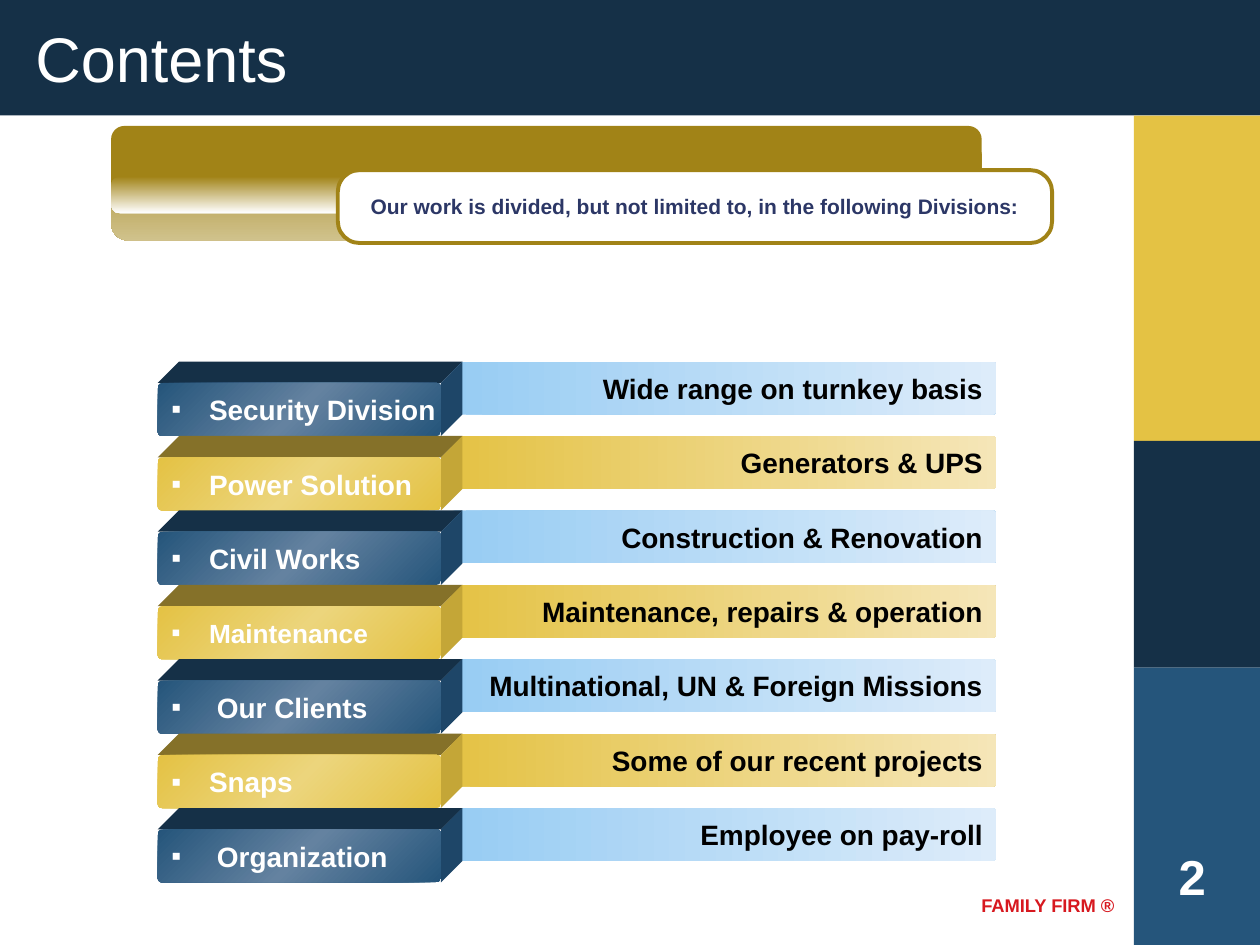
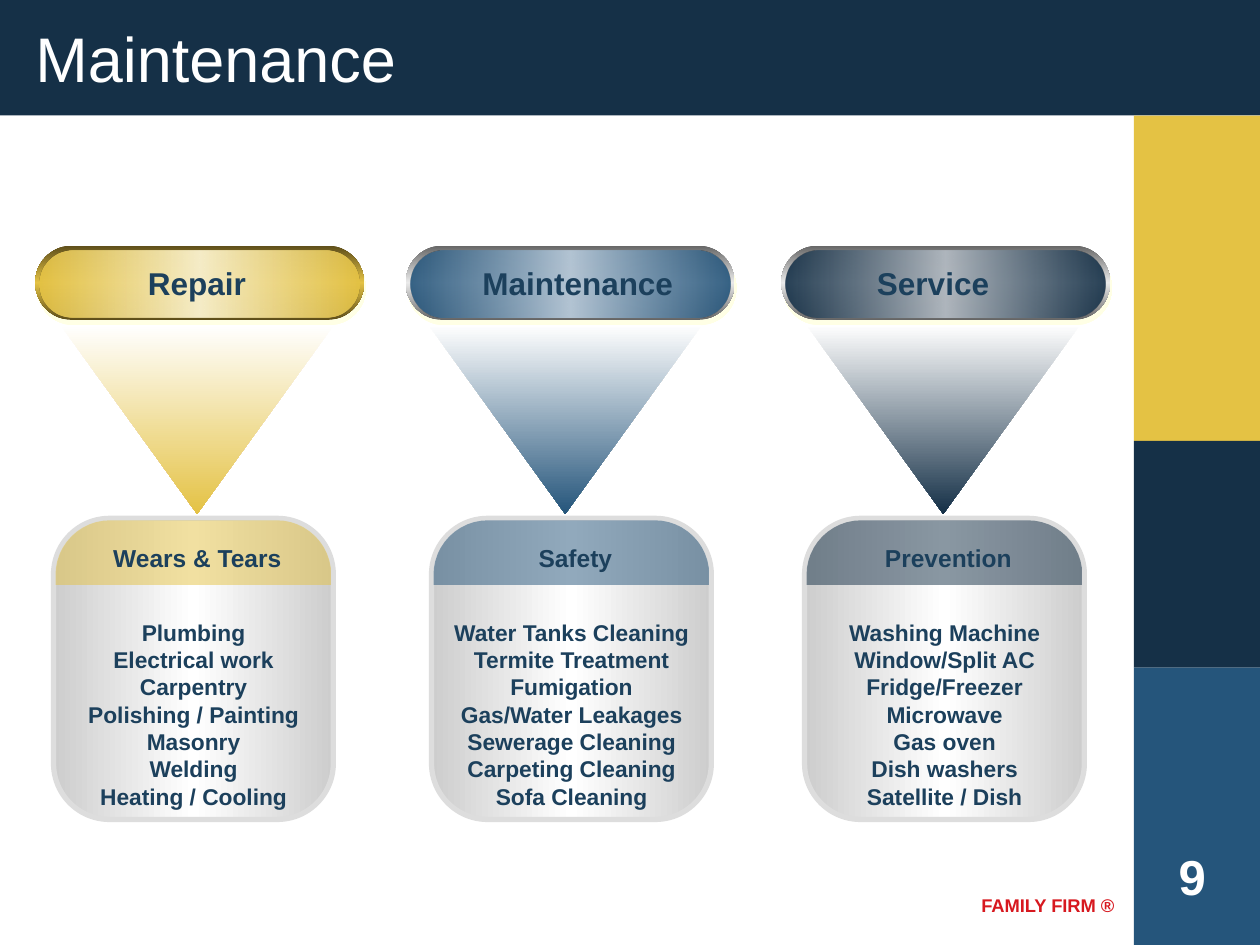
from dataclasses import dataclass
from math import cos, pi, sin

from pptx import Presentation
from pptx.dml.color import RGBColor
from pptx.enum.shapes import MSO_SHAPE
from pptx.enum.text import MSO_ANCHOR, MSO_AUTO_SIZE, PP_ALIGN
from pptx.oxml import parse_xml
from pptx.oxml.ns import nsdecls, qn
from pptx.util import Cm, Pt


@dataclass(frozen=True)
class Theme:
    font: str = "Arial"
    navy: str = "153047"
    blue: str = "25557B"
    gold: str = "E4C244"
    bronze: str = "A18317"
    ink: str = "1C405C"
    violet: str = "2C3766"
    red: str = "D7181F"
    white: str = "FFFFFF"
    black: str = "000000"
    title: float = 36
    number: float = 28
    pill: float = 18
    row: float = 16
    head: float = 14
    item: float = 13
    lead: float = 12
    foot: float = 10.5


@dataclass(frozen=True)
class Skin:
    front: tuple
    top: str
    side: str
    bar: tuple


@dataclass(frozen=True)
class Column:
    left: float
    label: str
    head: str
    items: tuple
    color: str
    glow: str
    rim: tuple
    pill: float
    cone: float
    word: float


T = Theme()
BLUE = Skin((T.blue, "6482A0", T.blue), T.navy, "1E4668", ("97CCF3", "DDECFA"))
GOLD = Skin((T.gold, "ECD57C", T.gold), "857129", "C4A637", (T.gold, "F5E6B8"))

# name, note, text indent, type size
ROWS = (
    ("Security Division", "Wide range on turnkey basis", 0.76, T.row),
    ("Power Solution", "Generators & UPS", 0.76, T.row),
    ("Civil Works", "Construction & Renovation", 0.76, T.row),
    ("Maintenance", "Maintenance, repairs & operation", 0.76, T.row - 1),
    ("Our Clients", "Multinational, UN & Foreign Missions", 0.92, T.row),
    ("Snaps", "Some of our recent projects", 0.76, T.row),
    ("Organization", "Employee on pay-roll", 0.92, T.row),
)

GREY = ("666666", "EAEAEA", "666666")
COLUMNS = (
    Column(1.08, "Repair", "Wears & Tears",
           ("Plumbing", "Electrical work", "Carpentry", "Polishing / Painting",
            "Masonry", "Welding", "Heating / Cooling"),
           T.gold, "F6EDC8", ("5E4E1A", T.gold, "5E4E1A"), -0.37, 0.14, 0.07),
    Column(8.7, "Maintenance", "Safety",
           ("Water Tanks Cleaning", "Termite Treatment", "Fumigation",
            "Gas/Water Leakages", "Sewerage Cleaning", "Carpeting Cleaning",
            "Sofa Cleaning"),
           T.blue, "B4C5D4", GREY, -0.52, -0.06, 0.13),
    Column(16.22, "Service", "Prevention",
           ("Washing Machine", "Window/Split AC", "Fridge/Freezer",
            "Microwave", "Gas oven", "Dish washers", "Satellite / Dish"),
           T.navy, "B0B7BE", GREY, -0.47, 0.04, -0.23),
)


# Fills and shapes
def solid(shape, color):
    shape.fill.solid()
    shape.fill.fore_color.rgb = RGBColor.from_string(color)


def blend(shape, colors, angle=0, alphas=(100, 100, 100)):
    """Fill with evenly spaced colours; the angle runs clockwise."""
    step = 100000 // (len(colors) - 1)
    stops = "".join(
        f'<a:gs pos="{i * step}"><a:srgbClr val="{color}">'
        f'<a:alpha val="{alpha * 1000}"/></a:srgbClr></a:gs>'
        for i, (color, alpha) in enumerate(zip(colors, alphas)))
    shape.fill.gradient()
    old = shape.element.spPr.find(qn("a:gradFill"))
    old.getparent().replace(old, parse_xml(
        f'<a:gradFill {nsdecls("a")} rotWithShape="1"><a:gsLst>{stops}</a:gsLst>'
        f'<a:lin ang="{angle * 60000}" scaled="0"/></a:gradFill>'))


def plain(shape, fill, angle=0):
    """Clear shadow and line, then fill with one colour or a blend."""
    if isinstance(fill, str):
        solid(shape, fill)
    else:
        blend(shape, fill, angle)
    shape.line.fill.background()
    shape.shadow.inherit = False
    return shape


def block(slide, kind, box, fill, angle=0, bend=None):
    shape = slide.shapes.add_shape(kind, *map(Cm, box))
    if bend is not None:
        shape.adjustments[0] = bend
    return plain(shape, fill, angle)


def facet(slide, points, fill):
    points = [(Cm(x), Cm(y)) for x, y in points]
    pen = slide.shapes.build_freeform(*points[0], scale=1)
    pen.add_line_segments(points[1:], close=True)
    return plain(pen.convert_to_shape(), fill)


def edge(shape, color, width):
    shape.line.color.rgb = RGBColor.from_string(color)
    shape.line.width = Pt(width)


# Text
def write(shape, lines, size, color, align=PP_ALIGN.CENTER, bold=True,
          anchor=MSO_ANCHOR.MIDDLE, bullet=None):
    frame = shape.text_frame
    frame.word_wrap = True
    frame.auto_size = MSO_AUTO_SIZE.NONE
    frame.vertical_anchor = anchor
    frame.text = "\n".join(lines)
    for para in frame.paragraphs:
        props = para._p.get_or_add_pPr()
        indent = Cm(bullet or 0)
        props.set("marL", str(indent))
        props.set("indent", str(-indent))
        if bullet:
            props.append(parse_xml(
                f'<a:buClr {nsdecls("a")}><a:srgbClr val="{color}"/></a:buClr>'))
            props.append(parse_xml(f'<a:buFont {nsdecls("a")} typeface="{T.font}"/>'))
            props.append(parse_xml(f'<a:buChar {nsdecls("a")} char="▪"/>'))
        else:
            props.append(parse_xml(f'<a:buNone {nsdecls("a")}/>'))
        para.alignment = align
        para.space_before = Pt(0)
        font = para.font
        font.name, font.size, font.bold = T.font, Pt(size), bold
        font.color.rgb = RGBColor.from_string(color)


def label(slide, box, text, size, color, **style):
    write(slide.shapes.add_textbox(*map(Cm, box)), [text], size, color, **style)


def place(holder, box):
    """Move a placeholder to the box and to the front."""
    holder.left, holder.top, holder.width, holder.height = map(Cm, box)
    holder.element.getparent().append(holder.element)


# Shared bands, title, footer and number
def frame(slide, title, number):
    rect = MSO_SHAPE.RECTANGLE
    block(slide, rect, (0, 0, 25.4, 2.33), T.navy)
    for top, tall, color in ((2.33, 6.56, T.gold), (8.89, 4.57, T.navy),
                             (13.46, 5.59, T.blue)):
        block(slide, rect, (22.86, top, 2.54, tall), color)
    label(slide, (18.02, 17.91, 4.7, 0.84), "FAMILY FIRM ®", T.foot, T.red,
          align=PP_ALIGN.RIGHT, anchor=MSO_ANCHOR.TOP)
    label(slide, (23.3, 16.94, 1.47, 1.45), number, T.number, T.white,
          anchor=MSO_ANCHOR.TOP)
    place(slide.shapes.title, (0.46, 0.48, 19.69, 1.35))
    write(slide.shapes.title, [title], T.title, T.white,
          align=PP_ALIGN.LEFT, bold=False)


# Contents slide
def banner(slide, x, y):
    kind, wide = MSO_SHAPE.ROUNDED_RECTANGLE, 17.55
    block(slide, kind, (x, y + 0.28, wide, 2.03), (T.bronze, "D0C28C"), 90, 0.17)
    block(slide, kind, (x, y, wide, 1.57), T.bronze, bend=0.17)
    block(slide, kind, (x, y + 1.02, wide, 0.74), (T.bronze, T.white), 90, 0.24)
    plate = block(slide, kind, (x + 4.57, y + 0.89, 14.4, 1.47), T.white, bend=0.3)
    edge(plate, T.bronze, 2.25)
    write(plate, ["Our work is divided, but not limited to, in the following Divisions:"],
          T.lead, T.violet)


def entry(slide, x, y, row, skin):
    name, note, indent, size = row
    wide, tall, deep = 5.71, 1.07, 0.43
    kind, right, front = MSO_SHAPE.ROUNDED_RECTANGLE, x + wide, y + deep
    bar = block(slide, kind, (x + 5.91, y, 11, tall), skin.bar, bend=0.08)
    write(bar, [note], T.row, T.black, align=PP_ALIGN.RIGHT)
    # Solid block: top face, side face, front
    facet(slide, ((x, front), (x + deep, y), (right + deep, y), (right, front)), skin.top)
    facet(slide, ((right, front), (right + deep, y), (right + deep, y + tall),
                  (right, front + tall)), skin.side)
    face = block(slide, kind, (x, front, wide, tall), skin.front, 45, 0.08)
    face.text_frame.margin_right = 0
    write(face, [name], size, T.white, align=PP_ALIGN.LEFT, bullet=indent)


def contents(deck):
    slide = deck.slides.add_slide(deck.slide_layouts.get_by_name("Title Only"))
    frame(slide, "Contents", "2")
    banner(slide, 2.24, 2.54)
    for i, row in enumerate(ROWS):
        entry(slide, 3.18, 7.29 + i * 1.5, row, (BLUE, GOLD)[i % 2])


# Maintenance slide
def pill(slide, x, y, col):
    kind = MSO_SHAPE.ROUNDED_RECTANGLE
    rim = block(slide, kind, (x, y, 6.63, 1.5), col.rim, 90, 0.5)
    rim.element.spPr.find(qn("a:effectLst")).append(parse_xml(
        f'<a:outerShdw {nsdecls("a")} dist="{Pt(3.2)}" dir="{72 * 60000}">'
        '<a:srgbClr val="FFFFCC"><a:alpha val="50000"/></a:srgbClr></a:outerShdw>'))
    core = block(slide, kind, (x + 0.09, y + 0.1, 6.45, 1.35), T.white, bend=0.5)
    blend(core, (col.color, col.glow, col.color), alphas=(90, 100, 90))


def tab(slide, x, y, color):
    """Half-clear cap with rounded upper corners."""
    wide, tall, bend = 5.56, 1.3, 1.1
    turns = [pi / 2 * i / 12 for i in range(13)]
    left = [(x + bend - bend * cos(t), y + bend - bend * sin(t)) for t in turns]
    right = [(2 * x + wide - px, py) for px, py in reversed(left)]
    cap = facet(slide, [(x, y + tall), *left, *right, (x + wide, y + tall)], color)
    blend(cap, (color, color), alphas=(50, 50))


def column(slide, x, y, col, holder):
    wide, top = 5.64, y + 5.5
    pill(slide, x + col.pill, y, col)
    label(slide, (x + col.word, y + 0.2, wide, 1.1), col.label, T.pill, T.ink)
    block(slide, MSO_SHAPE.FLOWCHART_MERGE, (x + col.cone, y + 1.6, 5.51, 3.81),
          (T.white, col.color), 90)
    card = block(slide, MSO_SHAPE.ROUNDED_RECTANGLE, (x, top, wide, 6.07),
                 ("CDCDCD", T.white, "CDCDCD"), bend=0.2)
    edge(card, "DDDDDD", 3)
    tab(slide, x + 0.04, top + 0.04, col.color)
    label(slide, (x + 0.08, top + 0.36, wide, 0.86), col.head, T.head, T.ink)
    place(holder, (x, top + 1.89, wide, 4.14))
    write(holder, col.items, T.item, T.ink, anchor=MSO_ANCHOR.TOP)


def service(deck):
    slide = deck.slides.add_slide(deck.slide_layouts.get_by_name("Comparison"))
    frame(slide, "Maintenance", "9")
    bodies = [p for p in slide.placeholders if p.placeholder_format.idx > 0]
    for col, holder in zip(COLUMNS, bodies):
        column(slide, col.left, 4.95, col, holder)
    for spare in bodies[len(COLUMNS):]:
        spare.element.getparent().remove(spare.element)


def main():
    deck = Presentation()
    deck.slide_width, deck.slide_height = Cm(25.4), Cm(19.05)
    contents(deck)
    service(deck)
    deck.save("out.pptx")


if __name__ == "__main__":
    main()
